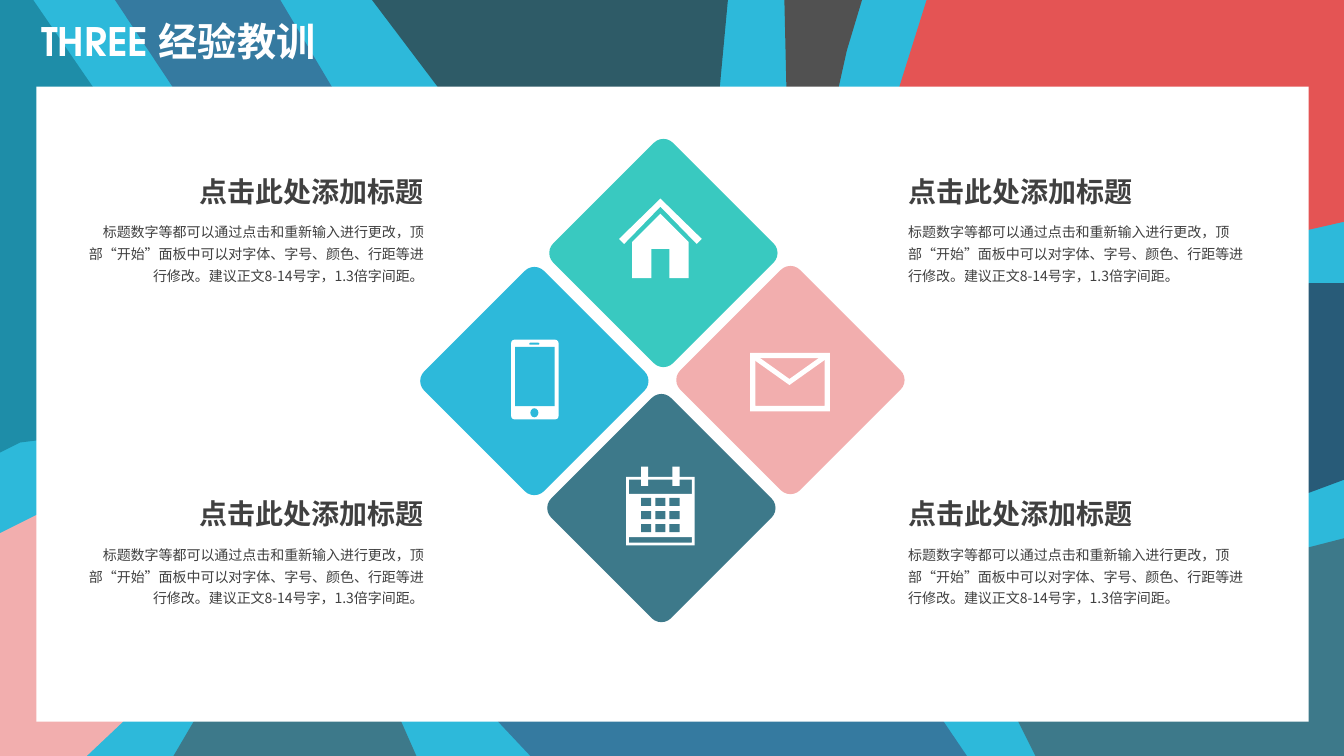
from dataclasses import dataclass
from itertools import product

from lxml import etree
from pptx import Presentation
from pptx.dml.color import RGBColor
from pptx.enum.shapes import MSO_SHAPE
from pptx.enum.text import MSO_ANCHOR, MSO_AUTO_SIZE, PP_ALIGN
from pptx.oxml.ns import qn
from pptx.util import Inches, Pt

RECTANGLE = MSO_SHAPE.RECTANGLE
ROUNDED = MSO_SHAPE.ROUNDED_RECTANGLE
OVAL = MSO_SHAPE.OVAL
FRAME = MSO_SHAPE.FRAME
MIDDLE = MSO_ANCHOR.MIDDLE
TOP = MSO_ANCHOR.TOP
LEFT = PP_ALIGN.LEFT
RIGHT = PP_ALIGN.RIGHT
FIT_SHAPE = MSO_AUTO_SIZE.SHAPE_TO_FIT_TEXT
NO_FIT = MSO_AUTO_SIZE.NONE


@dataclass(frozen=True)
class Theme:
    sky: str = "2DB9DA"
    teal: str = "1E8DA8"
    pink: str = "F2AEAE"
    slate: str = "3D798A"
    blue: str = "357AA0"
    pine: str = "2E5B67"
    gray: str = "515151"
    red: str = "E45454"
    navy: str = "285B78"
    mint: str = "39C9C0"
    white: str = "FFFFFF"
    ink: str = "404040"
    display_font: str = "TeX Gyre Adventor"
    text_font: str = "Noto Sans CJK SC"
    title_size: int = 28
    heading_size: int = 20
    body_size: int = 10


THEME = Theme()
SLIDE_WIDTH, SLIDE_HEIGHT = 13.33, 7.5
PANEL_LEFT, PANEL_TOP, PANEL_RIGHT, PANEL_BOTTOM = 0.36, 0.86, 12.98, 7.16
DIAMOND_SIDE = 1.68
HEADING = "点击此处添加标题"
BODY = ("标题数字等都可以通过点击和重新输入进行更改，顶部“开始”面板中可以对字体、字号、"
        "颜色、行距等进行修改。建议正文8-14号字，1.3倍字间距。")

WAVES = (
    (THEME.teal, ((0, 0), (0.33, 0), (0.92, PANEL_TOP), (2.72, 3.05),
                  (PANEL_LEFT, 4.37), (0.2, 4.39), (0, 4.49))),
    (THEME.pink, ((0, 5.29), (PANEL_LEFT, 5.11), (3.2, 3.55), (1.22, PANEL_BOTTOM),
                  (0.86, SLIDE_HEIGHT), (0, SLIDE_HEIGHT))),
    (THEME.slate, ((1.92, PANEL_BOTTOM), (3.51, 3.88), (3.98, PANEL_BOTTOM),
                   (4.13, SLIDE_HEIGHT), (1.72, SLIDE_HEIGHT))),
    (THEME.blue, ((1.14, 0), (2.78, 0), (3.29, PANEL_TOP), (9.36, PANEL_BOTTOM),
                  (9.59, SLIDE_HEIGHT), (5.26, SLIDE_HEIGHT), (4.94, PANEL_BOTTOM),
                  (1.71, PANEL_TOP))),
    (THEME.pine, ((3.69, 0), (7.22, 0), (7.14, PANEL_TOP), (7.75, 3.05), (4.34, PANEL_TOP))),
    (THEME.gray, ((7.78, 0), (8.55, 0), (8.4, 0.5), (8.32, PANEL_TOP), (8.26, 2.77),
                  (7.8, PANEL_TOP))),
    (THEME.red, ((9.19, 0), (SLIDE_WIDTH, 0), (SLIDE_WIDTH, 2.2), (PANEL_RIGHT, 2.28),
                 (8.74, 2.77), (8.92, PANEL_TOP))),
    (THEME.navy, ((PANEL_RIGHT, 2.81), (SLIDE_WIDTH, 2.81), (SLIDE_WIDTH, 4.76),
                  (PANEL_RIGHT, 4.89), (8.79, 3.26))),
    (THEME.slate, ((8.49, 3.58), (PANEL_RIGHT, 5.43), (SLIDE_WIDTH, 5.34),
                   (SLIDE_WIDTH, SLIDE_HEIGHT), (10.27, SLIDE_HEIGHT), (10.1, PANEL_BOTTOM))),
)


def paint(shape, color):
    shape.shadow.inherit = False
    shape.fill.solid()
    shape.fill.fore_color.rgb = RGBColor.from_string(color)
    shape.line.fill.background()


def add_box(shapes, kind, left, top, width, height, color, adjustment=None):
    shape = shapes.add_shape(kind, Inches(left), Inches(top), Inches(width), Inches(height))
    paint(shape, color)
    if adjustment is not None:
        shape.adjustments[0] = adjustment
    return shape


def add_outline(shapes, outline, color):
    points = [(Inches(x), Inches(y)) for x, y in outline]
    builder = shapes.build_freeform(*points[0])
    builder.add_line_segments(points[1:], close=True)
    paint(builder.convert_to_shape(), color)


def add_mirrored(shapes, center, half, color):
    right = [(center + offset, y) for offset, y in half]
    left = [(center - offset, y) for offset, y in reversed(half)]
    add_outline(shapes, right + left, color)


def write_text(shape, text, *, size, color=THEME.ink, font=THEME.display_font, bold=False,
               align=LEFT, spacing=1.3, wrap=True, fit=FIT_SHAPE, anchor=TOP):
    frame = shape.text_frame
    frame.word_wrap = wrap
    frame.auto_size = fit
    frame.vertical_anchor = anchor
    paragraph = frame.paragraphs[0]
    paragraph.alignment = align
    paragraph.line_spacing = spacing
    paragraph.space_before = Pt(0)
    run = paragraph.add_run()
    run.text = text
    run.font.name = font
    run.font.size = Pt(size)
    run.font.bold = bold
    run.font.color.rgb = RGBColor.from_string(color)
    east_asian = etree.SubElement(run.font._element, qn("a:ea"))
    east_asian.set("typeface", THEME.text_font)


def add_text(shapes, text, left, top, width, height, **text_format):
    box = shapes.add_textbox(Inches(left), Inches(top), Inches(width), Inches(height))
    write_text(box, text, **text_format)


def add_title(slide, text):
    title = slide.shapes.title
    title.left, title.top, title.width, title.height = map(Inches, (0.31, 0.11, 8.48, 0.65))
    write_text(title, text, size=THEME.title_size, color=THEME.white, bold=True,
               spacing=0.9, fit=NO_FIT, anchor=MIDDLE)
    title.element.getparent().append(title.element)


def add_house(shapes):
    roof = ((0, 1.97), (0.41, 2.37), (0.36, 2.42), (0, 2.05))
    walls = ((0, 2.12), (0.28, 2.4), (0.28, 2.76), (0.09, 2.76), (0.09, 2.47))
    for half in (roof, walls):
        add_mirrored(shapes, 6.55, half, THEME.white)


def add_phone(shapes):
    add_box(shapes, ROUNDED, 5.07, 3.37, 0.47, 0.79, THEME.white, 0.07)
    add_box(shapes, RECTANGLE, 5.11, 3.44, 0.39, 0.59, THEME.sky)
    add_box(shapes, OVAL, 5.26, 4.05, 0.08, 0.09, THEME.sky)
    add_box(shapes, ROUNDED, 5.25, 3.4, 0.1, 0.02, THEME.sky, 0.5)


def add_envelope(shapes):
    add_box(shapes, FRAME, 7.44, 3.5, 0.79, 0.58, THEME.white, 0.09)
    flap = ((0, 3.76), (0.35, 3.51), (0.38, 3.55), (0, 3.82))
    add_mirrored(shapes, 7.83, flap, THEME.white)


def add_calendar(shapes):
    add_box(shapes, FRAME, 6.21, 4.73, 0.68, 0.68, THEME.white, 0.04)
    add_box(shapes, RECTANGLE, 6.23, 4.9, 0.65, 0.43, THEME.white)
    for left in (6.36, 6.67):
        add_box(shapes, RECTANGLE, left, 4.63, 0.07, 0.19, THEME.white)
    for row, column in product(range(3), repeat=2):
        add_box(shapes, RECTANGLE, 6.36 + 0.14 * column, 4.94 + 0.13 * row, 0.1, 0.08, THEME.slate)


def main():
    presentation = Presentation()
    presentation.slide_width = Inches(SLIDE_WIDTH)
    presentation.slide_height = Inches(SLIDE_HEIGHT)
    slide = presentation.slides.add_slide(presentation.slide_layouts[5])
    shapes = slide.shapes
    slide.background.fill.solid()
    slide.background.fill.fore_color.rgb = RGBColor.from_string(THEME.sky)

    for color, outline in WAVES:
        add_outline(shapes, outline, color)
    add_box(shapes, RECTANGLE, PANEL_LEFT, PANEL_TOP, PANEL_RIGHT - PANEL_LEFT,
            PANEL_BOTTOM - PANEL_TOP, THEME.white)
    add_title(slide, "THREE 经验教训")

    for left, top, color, add_icon in (
        (5.74, 1.67, THEME.mint, add_house),
        (4.46, 2.94, THEME.sky, add_phone),
        (7, 2.93, THEME.pink, add_envelope),
        (5.72, 4.2, THEME.slate, add_calendar),
    ):
        diamond = add_box(shapes, ROUNDED, left, top, DIAMOND_SIDE, DIAMOND_SIDE, color, 0.08)
        diamond.rotation = 315
        add_icon(shapes.add_group_shape().shapes)

    columns = ((8.91, 8.91, LEFT), (1.85, 0.77, RIGHT))
    for (heading_left, body_left, align), top in product(columns, (1.58, 4.78)):
        add_text(shapes, HEADING, heading_left, top, 2.45, 0.54,
                 size=THEME.heading_size, bold=True, align=align, wrap=False)
        add_text(shapes, BODY, body_left, top + 0.54, 3.53, 0.76,
                 size=THEME.body_size, font=THEME.text_font, align=align)
    presentation.save("out.pptx")


if __name__ == "__main__":
    main()
